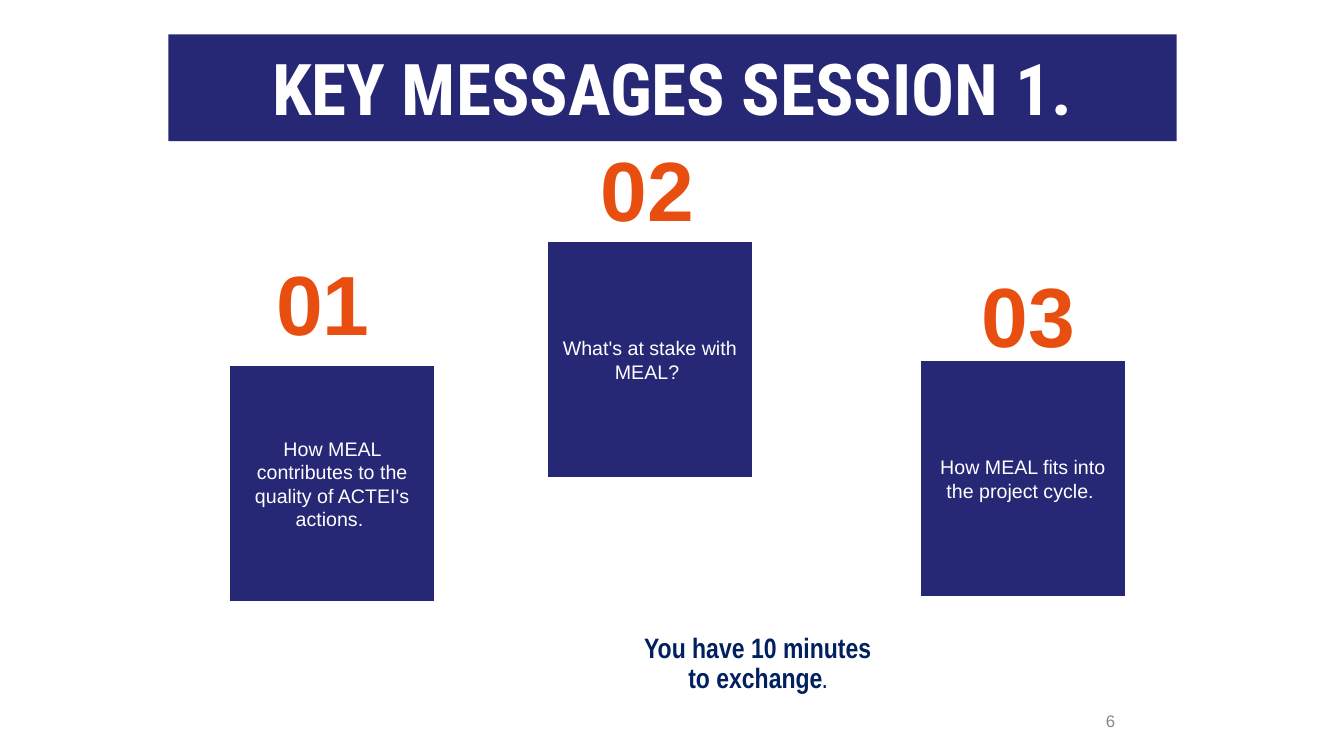
"""Build the key messages slide of session 1."""
from pptx import Presentation
from pptx.dml.color import RGBColor
from pptx.enum.shapes import MSO_SHAPE
from pptx.enum.text import MSO_ANCHOR as ANCHOR, MSO_AUTO_SIZE as AUTO, PP_ALIGN as ALIGN
from pptx.util import Inches, Pt

NAVY = RGBColor(0x26, 0x27, 0x75)
DARK_BLUE = RGBColor(0x00, 0x20, 0x60)
ORANGE = RGBColor(0xE8, 0x4E, 0x0F)
WHITE = RGBColor(0xFF, 0xFF, 0xFF)
GRAY = RGBColor(0x88, 0x88, 0x88)

CARD_W, CARD_H = 2.05, 2.36
NUMBER_W, NUMBER_H = 1.3, 1.12

MESSAGES = [
    ("01", (2.64, 2.45), (2.27, 3.62), "How MEAL contributes to the quality of ACTEI's actions. "),
    ("02", (5.86, 1.31), (5.42, 2.39), "What's at stake with MEAL? "),
    ("03", (9.64, 2.56), (9.12, 3.57), "How MEAL fits into the project cycle. "),
]


def box(left, top, width, height):
    return [Inches(v) for v in (left, top, width, height)]


def fill_text(sp, runs, color, font="Arial", align=ALIGN.CENTER, anchor=ANCHOR.TOP, inset=0.05):
    """Write (text, size, bold) runs as one paragraph and return it."""
    tf = sp.text_frame
    tf.word_wrap = True
    tf.auto_size = AUTO.NONE
    tf.vertical_anchor = anchor
    tf.margin_left = tf.margin_right = Inches(0.1)
    tf.margin_top = tf.margin_bottom = Inches(inset)
    p = tf.paragraphs[0]
    p.alignment = align
    for text, size, bold in runs:
        r = p.add_run()
        r.text = text
        r.font.name = font
        r.font.size = Pt(size)
        r.font.bold = bold
        r.font.color.rgb = color
    return p


def add_title(s, text):
    sp = s.shapes.title
    sp.left, sp.top, sp.width, sp.height = box(1.67, 0.34, 10, 1.06)
    sp.fill.solid()
    sp.fill.fore_color.rgb = NAVY
    fill_text(sp, [(text, 51, True)], WHITE, "Roboto Condensed", inset=0.1)


def add_text(s, place, runs, color, **style):
    return fill_text(s.shapes.add_textbox(*box(*place)), runs, color, **style)


def add_card(s, left, top, text):
    sp = s.shapes.add_shape(MSO_SHAPE.RECTANGLE, *box(left, top, CARD_W, CARD_H))
    sp.shadow.inherit = False
    sp.fill.solid()
    sp.fill.fore_color.rgb = NAVY
    sp.line.color.rgb = WHITE
    sp.line.width = Pt(2)
    fill_text(sp, [(text, 14, False)], WHITE, anchor=ANCHOR.MIDDLE)


def main():
    prs = Presentation()
    prs.slide_width, prs.slide_height = Inches(13.33), Inches(7.5)
    s = prs.slides.add_slide(prs.slide_layouts[5])
    add_title(s, "KEY MESSAGES SESSION 1.")
    for number, number_at, card_at, message in MESSAGES:
        add_text(s, (*number_at, NUMBER_W, NUMBER_H), [(number, 60, True)], ORANGE, align=ALIGN.LEFT)
        add_card(s, *card_at, message)
    p = add_text(s, (6.18, 6.24, 2.67, 0.71),
                 [("You have 10 minutes to exchange", 20, True), (".", 14, True)],
                 DARK_BLUE, font="Arial Narrow")
    p.line_spacing = 0.9
    add_text(s, (8.83, 6.95, 2.33, 0.4), [("6", 12, False)], GRAY,
             align=ALIGN.RIGHT, anchor=ANCHOR.MIDDLE)
    prs.save("out.pptx")


if __name__ == "__main__":
    main()
